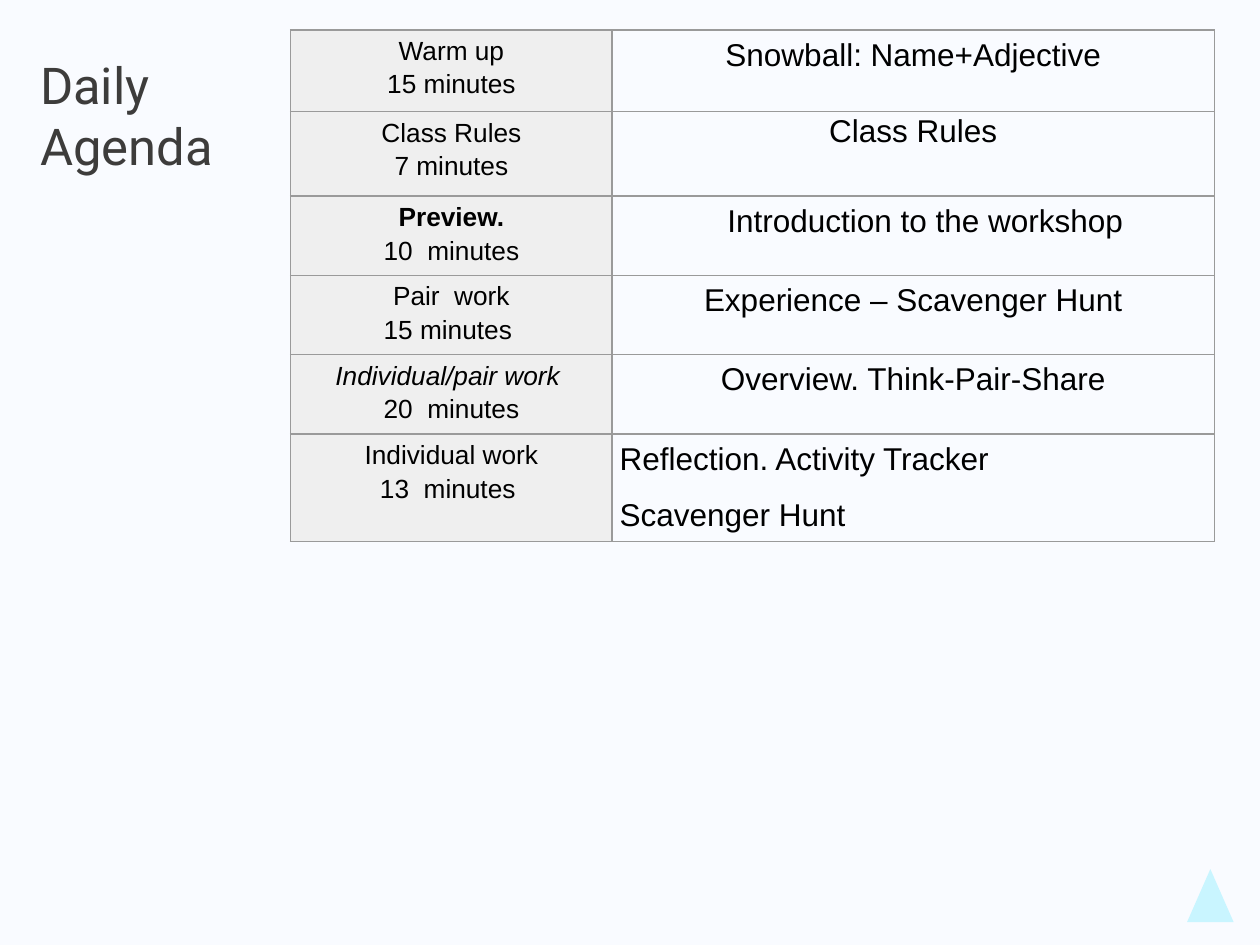
from dataclasses import dataclass
from typing import Any

from lxml import etree
from pptx import Presentation
from pptx.dml.color import RGBColor as Rgb
from pptx.enum import shapes as sh, text as tx
from pptx.oxml import ns
from pptx.util import Cm, Pt


@dataclass(frozen=True)
class Theme:
    back: str = "F9FBFF"
    head: str = "3D3C3B"
    ink: str = "000000"
    side: str = "EFEFEF"
    rule: str = "9A9A9A"
    mark: str = "C9F5FF"
    body: str = "Arial"
    face: str = "Roboto"
    big: int = 29
    mid: int = 18
    small: int = 15


@dataclass(frozen=True)
class Item:
    task: str
    time: str
    topic: tuple[str, ...]
    high: float = 1.6
    bold: bool = False
    slant: bool = False
    lead: float = 1.15
    dent: float = 0
    align: Any = tx.PP_ALIGN.CENTER


T = Theme()
ITEMS = (
    Item("Warm up", "15 minutes", ("Snowball: Name+Adjective",), 1.65),
    Item("Class Rules", "7 minutes", ("Class Rules",), 1.7, lead=1.0),
    Item("Preview.", "10  minutes", ("Introduction to the workshop",), bold=True, dent=0.48),
    Item("Pair  work", "15 minutes ", ("Experience – Scavenger Hunt",)),
    Item("Individual/pair work ", "20  minutes", ("Overview. Think-Pair-Share",), slant=True),
    Item("Individual work", "13  minutes ",
         ("Reflection. Activity Tracker", "Scavenger Hunt"), align=tx.PP_ALIGN.LEFT),
)


def put(obj: Any, vals: dict[str, Any]) -> None:
    for key, val in vals.items():
        setattr(obj, key, val)


def write(para: Any, words: str, size: int, face: str = T.body, tint: str = T.ink,
          bold: bool = False, slant: bool = False, **form: Any) -> None:
    put(para, form)
    run = para.add_run()
    run.text = words
    put(run.font, {"name": face, "size": Pt(size), "bold": bold, "italic": slant})
    run.font.color.rgb = Rgb.from_string(tint)


def paint(fill: Any, tint: str) -> None:
    fill.solid()
    fill.fore_color.rgb = Rgb.from_string(tint)


def frame(cell: Any, tint: str | None) -> None:
    put(cell, {"margin_left": Cm(0.15), "margin_right": Cm(0.15),
               "margin_top": Cm(0.05), "margin_bottom": Cm(0.05)})
    prop = cell._tc.get_or_add_tcPr()
    for edge in ("lnL", "lnR", "lnT", "lnB"):
        line = etree.SubElement(prop, ns.qn(f"a:{edge}"), w=str(Pt(1)))
        fill = etree.SubElement(line, ns.qn("a:solidFill"))
        etree.SubElement(fill, ns.qn("a:srgbClr"), val=T.rule)
    if tint:
        paint(cell.fill, tint)
    else:
        cell.fill.background()


def title(slide: Any) -> None:
    box = slide.shapes.add_textbox(Cm(0.56), Cm(1.14), Cm(14.43), Cm(2.34)).text_frame
    put(box, {"word_wrap": True, "vertical_anchor": tx.MSO_ANCHOR.MIDDLE})
    put(box, dict.fromkeys(("margin_left", "margin_right", "margin_top", "margin_bottom"), Cm(0.25)))
    write(box.paragraphs[0], "Daily", T.big, T.face, T.head)
    write(box.add_paragraph(), "Agenda", T.big, T.face, T.head)


def row(grid: Any, num: int, item: Item) -> None:
    grid.rows[num].height = Cm(item.high)
    left, right = grid.cell(num, 0), grid.cell(num, 1)
    frame(left, T.side)
    frame(right, None)
    form = {"alignment": tx.PP_ALIGN.CENTER, "line_spacing": 1.15}
    body = left.text_frame
    write(body.paragraphs[0], item.task, T.small, bold=item.bold, slant=item.slant, **form)
    write(body.add_paragraph(), item.time, T.small, **form)
    body = right.text_frame
    for pos, words in enumerate(item.topic):
        para = body.add_paragraph() if pos else body.paragraphs[0]
        write(para, words, T.mid, alignment=item.align,
              line_spacing=1.0 if pos else item.lead, space_before=Pt(12 if pos else 0))
        if item.dent:
            para._p.get_or_add_pPr().set("marL", str(Cm(item.dent)))


def table(slide: Any) -> None:
    wide = (6.48, 12.14)
    high = sum(item.high for item in ITEMS)
    grid = slide.shapes.add_table(len(ITEMS), len(wide), Cm(5.86), Cm(0.6),
                                  Cm(sum(wide)), Cm(high)).table
    put(grid, {"first_row": False, "horz_banding": False})
    for col, size in zip(grid.columns, wide):
        col.width = Cm(size)
    for num, item in enumerate(ITEMS):
        row(grid, num, item)


def mark(slide: Any) -> None:
    tip = slide.shapes.add_shape(sh.MSO_SHAPE.ISOSCELES_TRIANGLE,
                                 Cm(23.93), Cm(17.52), Cm(0.94), Cm(1.07))
    tip.shadow.inherit = False
    paint(tip.fill, T.mark)
    tip.line.fill.background()


def main() -> None:
    """Build the daily agenda slide."""
    deck = Presentation()
    put(deck, {"slide_width": Cm(25.4), "slide_height": Cm(19.05)})
    slide = deck.slides.add_slide(deck.slide_layouts[6])
    paint(slide.background.fill, T.back)
    title(slide)
    mark(slide)
    table(slide)
    deck.save("out.pptx")


if __name__ == "__main__":
    main()
